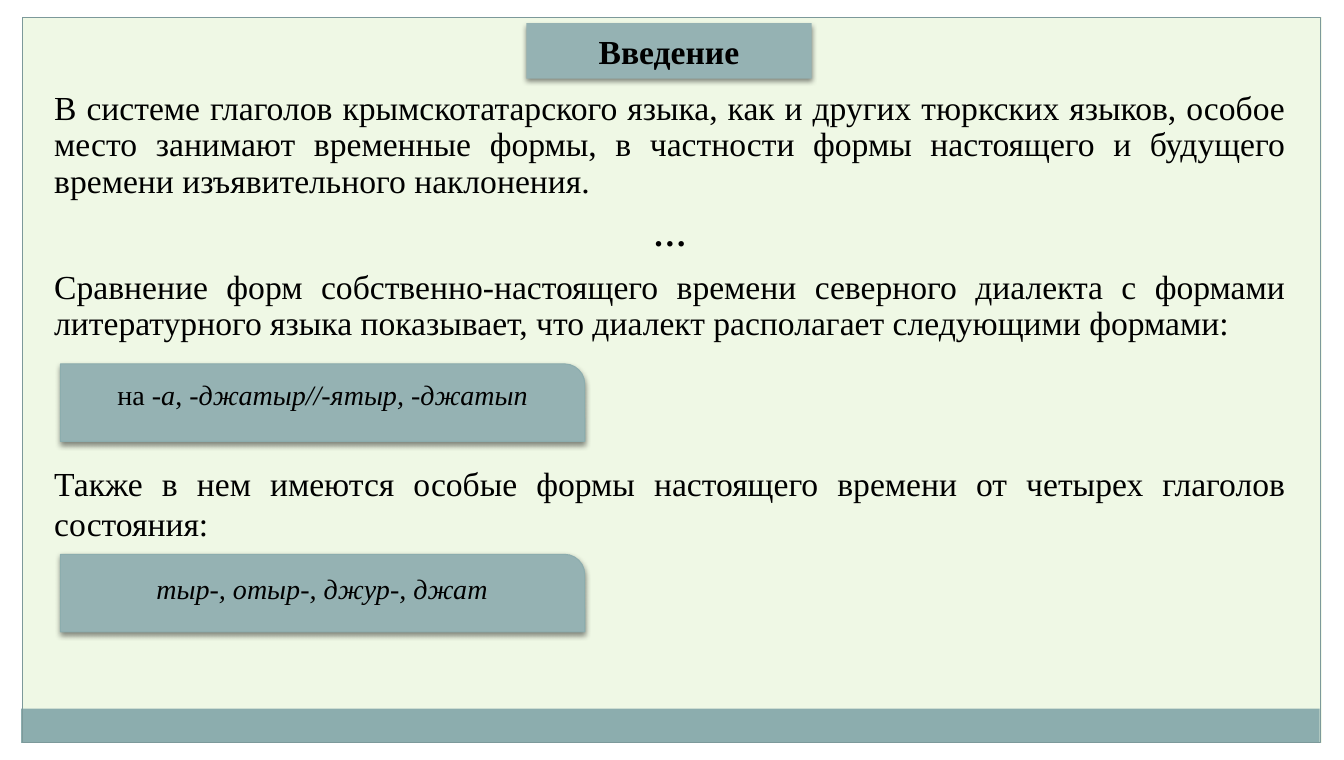
import lxml.etree
import pptx
import pptx.dml.color
import pptx.enum.shapes
import pptx.enum.text
import pptx.oxml
import pptx.oxml.ns
import pptx.util

RGB = pptx.dml.color.RGBColor
SHAPE = pptx.enum.shapes.MSO_SHAPE
ALIGN = pptx.enum.text.PP_ALIGN
ANCHOR = pptx.enum.text.MSO_ANCHOR
AUTO = pptx.enum.text.MSO_AUTO_SIZE
qn = pptx.oxml.ns.qn

WIDTH, HEIGHT = pptx.util.Inches(13.33), pptx.util.Inches(7.54)
FONT = "Times New Roman"
BLACK = RGB(0x00, 0x00, 0x00)
WHITE = RGB(0xFF, 0xFF, 0xFF)
PALE_GREEN = RGB(0xEF, 0xF8, 0xE5)
CARD = RGB(0x95, 0xB2, 0xB3)
BAND = RGB(0x8C, 0xAD, 0xAE)
FRAME = RGB(0x7C, 0x99, 0x9A)

# Boxes are left, top, width, height in percent of the slide
SIDE, EDGE = 1.65, 2.25
TEXT_LEFT, TEXT_WIDTH = 3.3, 93.1
CARD_LEFT, CARD_WIDTH, CARD_HEIGHT = 4.5, 39.01, 10.21


def place(box):
    left, top, width, height = box
    return (int(WIDTH * left / 100), int(HEIGHT * top / 100),
            int(WIDTH * width / 100), int(HEIGHT * height / 100))


def add_box(s, kind, box, fill=None, line=None):
    sp = s.shapes.add_shape(kind, *place(box))
    sp.shadow.inherit = False
    if fill is None:
        sp.fill.background()
    else:
        sp.fill.solid()
        sp.fill.fore_color.rgb = fill
    if line is None:
        sp.line.fill.background()
    else:
        sp.line.color.rgb = line
        sp.line.width = pptx.util.Pt(0.75)
    return sp


def add_shadow(sp):
    sp.shadow.inherit = False
    effects = sp.element.spPr.find(qn("a:effectLst"))
    shadow = lxml.etree.SubElement(
        effects, qn("a:outerShdw"), blurRad=str(pptx.util.Pt(4)),
        dist=str(pptx.util.Pt(2)), dir="5400000", rotWithShape="0")
    color = lxml.etree.SubElement(shadow, qn("a:srgbClr"), val=str(BLACK))
    lxml.etree.SubElement(color, qn("a:alpha"), val="45000")


def add_run(p, text, size, bold=False, italic=False):
    r = p.add_run()
    r.text = text
    r.font.name = FONT
    r.font.size = pptx.util.Pt(size)
    r.font.color.rgb = BLACK
    r.font.bold = bold
    r.font.italic = italic


def add_text(s, box, wrap=True):
    tf = s.shapes.add_textbox(*place(box)).text_frame
    tf.word_wrap = wrap
    return tf


def add_body(s, box, paragraphs, line_spacing=None, before=None):
    tf = add_text(s, box)
    for i, (text, align, bold) in enumerate(paragraphs):
        p = tf.add_paragraph() if i else tf.paragraphs[0]
        p.alignment = align
        if line_spacing:
            p.line_spacing = line_spacing
            p.space_before = pptx.util.Pt(before)
        add_run(p, text, 24, bold)


def add_card(s, top, label_box, runs, wrap=True):
    sp = add_box(s, SHAPE.ROUND_1_RECTANGLE,
                 (CARD_LEFT, top, CARD_WIDTH, CARD_HEIGHT), CARD, BAND)
    sp.adjustments[0] = 0.26
    add_shadow(sp)
    p = add_text(s, label_box, wrap).paragraphs[0]
    p.alignment = ALIGN.CENTER
    for text, italic in runs:
        add_run(p, text, 20, italic=italic)


def add_frame(s):
    s.background.fill.solid()
    s.background.fill.fore_color.rgb = PALE_GREEN
    for margin in ((0, 100 - EDGE, 100, EDGE), (0, 0, 100, EDGE),
                   (100 - SIDE, 0, SIDE, 100), (0, 0, SIDE, 100)):
        add_box(s, SHAPE.RECTANGLE, margin, WHITE)
    add_box(s, SHAPE.RECTANGLE, (1.58, 93.24, 96.62, 4.51), BAND)
    return add_box(s, SHAPE.RECTANGLE, (SIDE, EDGE, 96.62, 95.49), line=FRAME)


def format_title(title, text, box, below):
    below.element.addnext(title.element)
    title.left, title.top, title.width, title.height = place(box)
    # Pill outline on the title placeholder
    geom = pptx.oxml.parse_xml(
        '<a:prstGeom xmlns:a="http://schemas.openxmlformats.org/drawingml/2006/main"'
        ' prst="roundRect"><a:avLst><a:gd name="adj" fmla="val 50000"/></a:avLst>'
        '</a:prstGeom>')
    title.element.spPr.find(qn("a:xfrm")).addnext(geom)
    title.fill.solid()
    title.fill.fore_color.rgb = CARD
    add_shadow(title)
    tf = title.text_frame
    tf.auto_size = AUTO.NONE
    tf.vertical_anchor = ANCHOR.MIDDLE
    p = tf.paragraphs[0]
    p.alignment = ALIGN.CENTER
    add_run(p, text, 24, bold=True)


def main():
    prs = pptx.Presentation()
    prs.slide_width, prs.slide_height = WIDTH, HEIGHT
    s = prs.slides.add_slide(prs.slide_layouts[5])

    # Frame and title
    frame = add_frame(s)
    format_title(s.shapes.title, "Введение", (39.16, 3.05, 21.23, 7.29), frame)

    # Introduction and first group of forms
    add_body(s, (TEXT_LEFT, 11.41, TEXT_WIDTH, 48.94), [
        ("В системе глаголов крымскотатарского языка, как и других тюркских "
         "языков, особое место занимают временные формы, в частности формы "
         "настоящего и будущего времени изъявительного наклонения.",
         ALIGN.JUSTIFY, False),
        ("…", ALIGN.CENTER, True),
        ("Сравнение форм собственно-настоящего времени северного диалекта с "
         "формами литературного языка показывает, что диалект располагает "
         "следующими формами:", ALIGN.JUSTIFY, False),
    ], line_spacing=0.9, before=11.9)
    add_card(s, 47.88, (CARD_LEFT, 49.07, CARD_WIDTH, CARD_HEIGHT),
             [("на ", False), ("-а", True), (", ", False),
              ("-джатыр//-ятыр, -джатып", True)])

    # Verbs of state
    add_body(s, (TEXT_LEFT, 60.21, TEXT_WIDTH, 33.42), [
        ("Также в нем имеются особые формы настоящего времени от четырех "
         "глаголов состояния:", ALIGN.JUSTIFY, False)])
    add_card(s, 72.94, (10.8, 74.54, 26.33, 5.84),
             [("тыр-, отыр-, джур-, джат", True)], wrap=False)

    prs.save("out.pptx")


if __name__ == "__main__":
    main()
